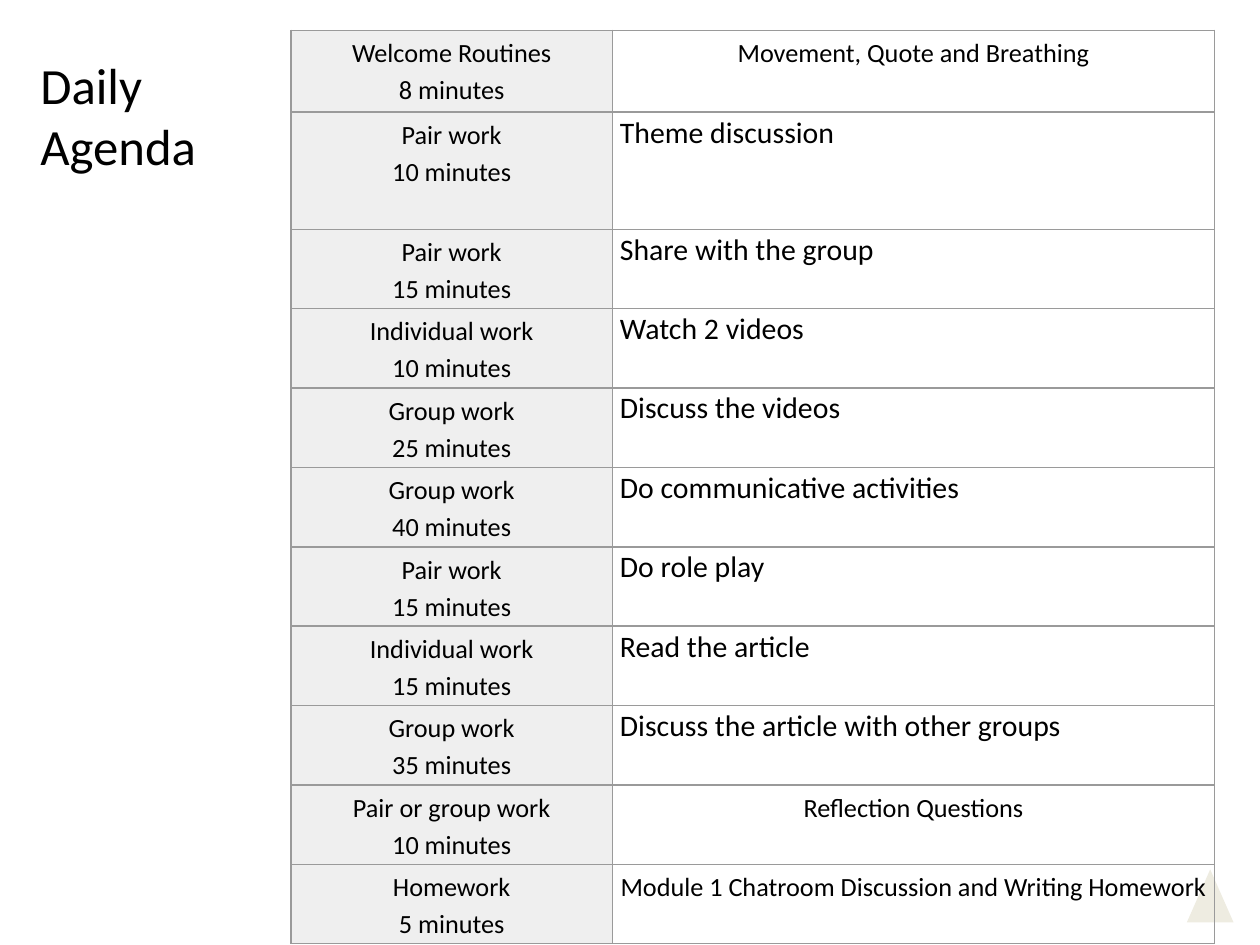
"""Build the daily agenda slide with its timetable."""
import dataclasses

import lxml.etree
import pptx
import pptx.dml.color
import pptx.enum.shapes
import pptx.enum.text
import pptx.oxml.ns
import pptx.util

Inches = pptx.util.Inches
Pt = pptx.util.Pt
Align = pptx.enum.text.PP_ALIGN

FONT = "Calibri"
COLORS = {"text": "000000", "label": "EFEFEF", "border": "9A9A9A", "accent": "EEECE1"}
COLUMN_WIDTHS = (2.55, 4.78)
ROW_HEIGHT = 0.63


@dataclasses.dataclass(frozen=True)
class Activity:
    format: str
    minutes: int
    task: str
    centered: bool = False
    height: float = ROW_HEIGHT


ACTIVITIES = (
    Activity("Welcome Routines", 8, "Movement, Quote and Breathing", True, 0.65),
    Activity("Pair work", 10, "Theme discussion", height=0.93),
    Activity("Pair work", 15, "Share with the group"),
    Activity("Individual work", 10, "Watch 2 videos"),
    Activity("Group work", 25, "Discuss the videos"),
    Activity("Group work", 40, "Do communicative activities"),
    Activity("Pair work", 15, "Do role play"),
    Activity("Individual work", 15, "Read the article"),
    Activity("Group work", 35, "Discuss the article with other groups"),
    Activity("Pair or group work", 10, "Reflection Questions", True),
    Activity("Homework", 5, "Module 1 Chatroom Discussion and Writing Homework", True),
)


def color(name: str) -> pptx.dml.color.RGBColor:
    return pptx.dml.color.RGBColor.from_string(COLORS[name])


def write(frame, lines: list[str], size: float, align, spacing: float = 1.0) -> None:
    frame.text = "\n".join(lines)
    for para in frame.paragraphs:
        para.alignment = align
        para.line_spacing = spacing
        para.space_before = Pt(0)
        para.font.name = FONT
        para.font.size = Pt(size)
        para.font.color.rgb = color("text")


def add_borders(cell) -> None:
    qn = pptx.oxml.ns.qn
    properties = cell._tc.get_or_add_tcPr()
    for side in ("a:lnL", "a:lnR", "a:lnT", "a:lnB"):
        line = lxml.etree.SubElement(properties, qn(side), w=str(Pt(1)))
        fill = lxml.etree.SubElement(line, qn("a:solidFill"))
        lxml.etree.SubElement(fill, qn("a:srgbClr"), val=COLORS["border"])


def fill_cell(cell, lines: list[str], centered: bool, shaded: bool) -> None:
    cell.margin_left = cell.margin_right = Inches(0.06)
    cell.margin_top = cell.margin_bottom = Inches(0.02)
    if centered:
        write(cell.text_frame, lines, 15, Align.CENTER, 1.15)
    else:
        write(cell.text_frame, lines, 17, Align.LEFT)
    add_borders(cell)
    if shaded:
        cell.fill.solid()
        cell.fill.fore_color.rgb = color("label")
    else:
        cell.fill.background()


def add_title(slide) -> None:
    title = slide.shapes.title
    title.left, title.top = Inches(0.22), Inches(0.45)
    title.width, title.height = Inches(5.68), Inches(0.92)
    frame = title.text_frame
    frame.margin_left = frame.margin_right = Inches(0.1)
    frame.margin_top = frame.margin_bottom = Inches(0.1)
    frame.vertical_anchor = pptx.enum.text.MSO_ANCHOR.MIDDLE
    frame.auto_size = pptx.enum.text.MSO_AUTO_SIZE.NONE
    write(frame, ["Daily", "Agenda"], 29, Align.LEFT)


def add_accent(slide) -> None:
    triangle = slide.shapes.add_shape(
        pptx.enum.shapes.MSO_SHAPE.ISOSCELES_TRIANGLE,
        Inches(9.42), Inches(6.9), Inches(0.37), Inches(0.42),
    )
    triangle.shadow.inherit = False
    triangle.fill.solid()
    triangle.fill.fore_color.rgb = color("accent")
    triangle.line.fill.background()


def add_agenda(slide) -> None:
    height = sum(activity.height for activity in ACTIVITIES)
    table = slide.shapes.add_table(
        len(ACTIVITIES), len(COLUMN_WIDTHS),
        Inches(2.31), Inches(0.24), Inches(sum(COLUMN_WIDTHS)), Inches(height),
    ).table
    table.first_row = table.horz_banding = False
    for column, width in zip(table.columns, COLUMN_WIDTHS):
        column.width = Inches(width)
    for row, activity in zip(table.rows, ACTIVITIES):
        row.height = Inches(activity.height)
        label, task = row.cells
        fill_cell(label, [activity.format, f"{activity.minutes} minutes"], True, True)
        fill_cell(task, [activity.task], activity.centered, False)


def main() -> None:
    deck = pptx.Presentation()
    deck.slide_width, deck.slide_height = Inches(10), Inches(7.5)
    slide = deck.slides.add_slide(deck.slide_layouts.get_by_name("Title Only"))
    add_title(slide)
    add_accent(slide)
    add_agenda(slide)
    deck.save("out.pptx")


if __name__ == "__main__":
    main()
